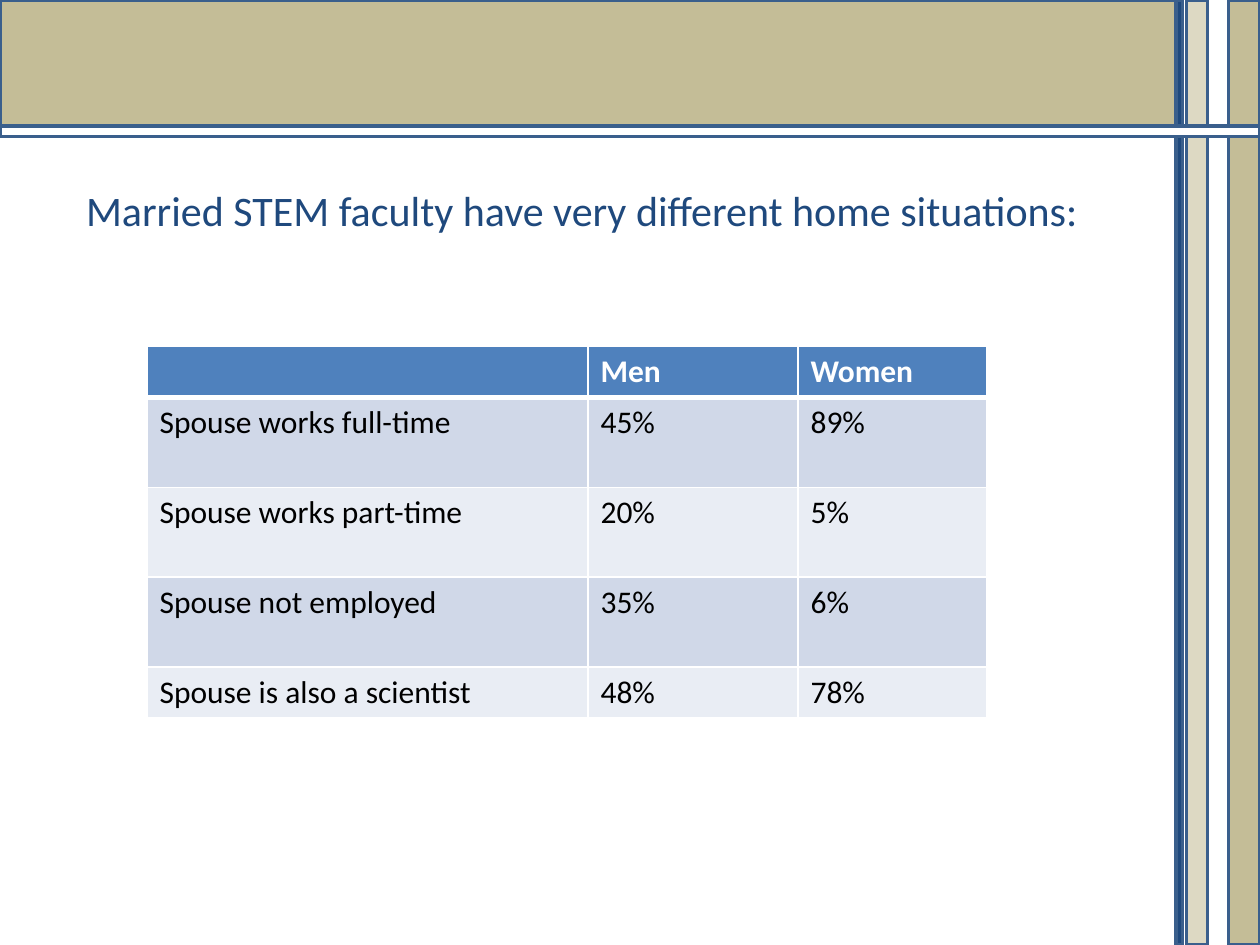
from lxml import etree
from pptx import Presentation
from pptx.dml.color import RGBColor
from pptx.enum.shapes import MSO_SHAPE
from pptx.enum.text import MSO_ANCHOR, MSO_AUTO_SIZE, PP_ALIGN
from pptx.oxml.ns import qn
from pptx.util import Inches, Pt

RECTANGLE = MSO_SHAPE.RECTANGLE
TOP = MSO_ANCHOR.TOP
LEFT = PP_ALIGN.LEFT
NO_AUTOFIT = MSO_AUTO_SIZE.NONE

# The slide is a grid of 120 columns by 90 rows
COLUMNS, ROWS = 120, 90
WIDTH, HEIGHT = Inches(10), Inches(7.5)
FONT = "Calibri"
COLORS = {
    "tan": "C4BD97", "light tan": "DDD9C3", "navy": "1F497D",
    "outline": "3A5F8C", "white": "FFFFFF", "black": "000000",
    "header": "4F81BD", "odd row": "D0D8E8", "even row": "E9EDF4",
}

# Frame bars from back to front: column, row, columns wide, rows high, colour
FRAME_BARS = [
    (0, 0, 112, 12, "tan"),
    (117, 0, 3, ROWS, "tan"),
    (113, 0, 2, ROWS, "light tan"),
    (112, 0, 0.6, ROWS, "navy"),
    (0, 12, COLUMNS, 1, "white"),
]
HEADING = "Married STEM faculty have very different home situations:"
SPOUSE_DATA = [
    ("", "Men", "Women"),
    ("Spouse works full-time", "45%", "89%"),
    ("Spouse works part-time", "20%", "5%"),
    ("Spouse not employed", "35%", "6%"),
    ("Spouse is also a scientist", "48%", "78%"),
]
TABLE_COLUMNS = (42, 20, 18)
TABLE_ROWS = (4.8, 8.55, 8.55, 8.55, 4.8)


def color(name):
    return RGBColor.from_string(COLORS[name])


def grid_box(column, row, columns, rows):
    x_step, y_step = WIDTH / COLUMNS, HEIGHT / ROWS
    return (round(column * x_step), round(row * y_step),
            round(columns * x_step), round(rows * y_step))


def style_font(font, size, color_name, bold=False):
    font.name = FONT
    font.size = Pt(size)
    font.bold = bold
    font.color.rgb = color(color_name)


def add_frame(page, bars):
    for *cells, fill in bars:
        bar = page.shapes.add_shape(RECTANGLE, *grid_box(*cells))
        bar.shadow.inherit = False
        bar.fill.solid()
        bar.fill.fore_color.rgb = color(fill)
        bar.line.color.rgb = color("outline")
        bar.line.width = Pt(2)


def place_heading(page, box):
    title = page.shapes.title
    title.left, title.top, title.width, title.height = box
    frame = title.text_frame
    frame.text = HEADING
    frame.word_wrap = True
    frame.auto_size = NO_AUTOFIT
    frame.vertical_anchor = TOP
    para = frame.paragraphs[0]
    para.alignment = LEFT
    style_font(para.runs[0].font, 24, "navy")


def add_borders(cell, widths):
    properties = cell._tc.get_or_add_tcPr()
    for side, width in widths.items():
        line = etree.SubElement(properties, qn(f"a:ln{side}"), w=str(Pt(width)))
        fill = etree.SubElement(line, qn("a:solidFill"))
        etree.SubElement(fill, qn("a:srgbClr"), val=COLORS["white"])


def add_spouse_table(page, box):
    left, top, width, height = box
    table = page.shapes.add_table(
        len(SPOUSE_DATA), len(TABLE_COLUMNS), left, top, width, height).table
    for column, share in zip(table.columns, TABLE_COLUMNS):
        column.width = round(width * share / sum(TABLE_COLUMNS))
    for row, share in zip(table.rows, TABLE_ROWS):
        row.height = round(height * share / sum(TABLE_ROWS))

    for r, values in enumerate(SPOUSE_DATA):
        is_header = r == 0
        fill = "header" if is_header else "odd row" if r % 2 else "even row"
        for c, value in enumerate(values):
            cell = table.cell(r, c)
            # A thick rule separates the header from the body
            add_borders(cell, {"L": 1, "R": 1, "T": 3 if r == 1 else 1,
                               "B": 3 if is_header else 1})
            cell.fill.solid()
            cell.fill.fore_color.rgb = color(fill)
            cell.text_frame.text = value
            style_font(cell.text_frame.paragraphs[0].font, 18,
                       "white" if is_header else "black", is_header)


def main():
    deck = Presentation()
    deck.slide_width, deck.slide_height = WIDTH, HEIGHT
    page = deck.slides.add_slide(deck.slide_layouts[5])
    add_frame(page, FRAME_BARS)
    place_heading(page, grid_box(7, 17, 99, 64))
    add_spouse_table(page, grid_box(14, 33, sum(TABLE_COLUMNS), sum(TABLE_ROWS)))
    deck.save("out.pptx")


if __name__ == "__main__":
    main()
